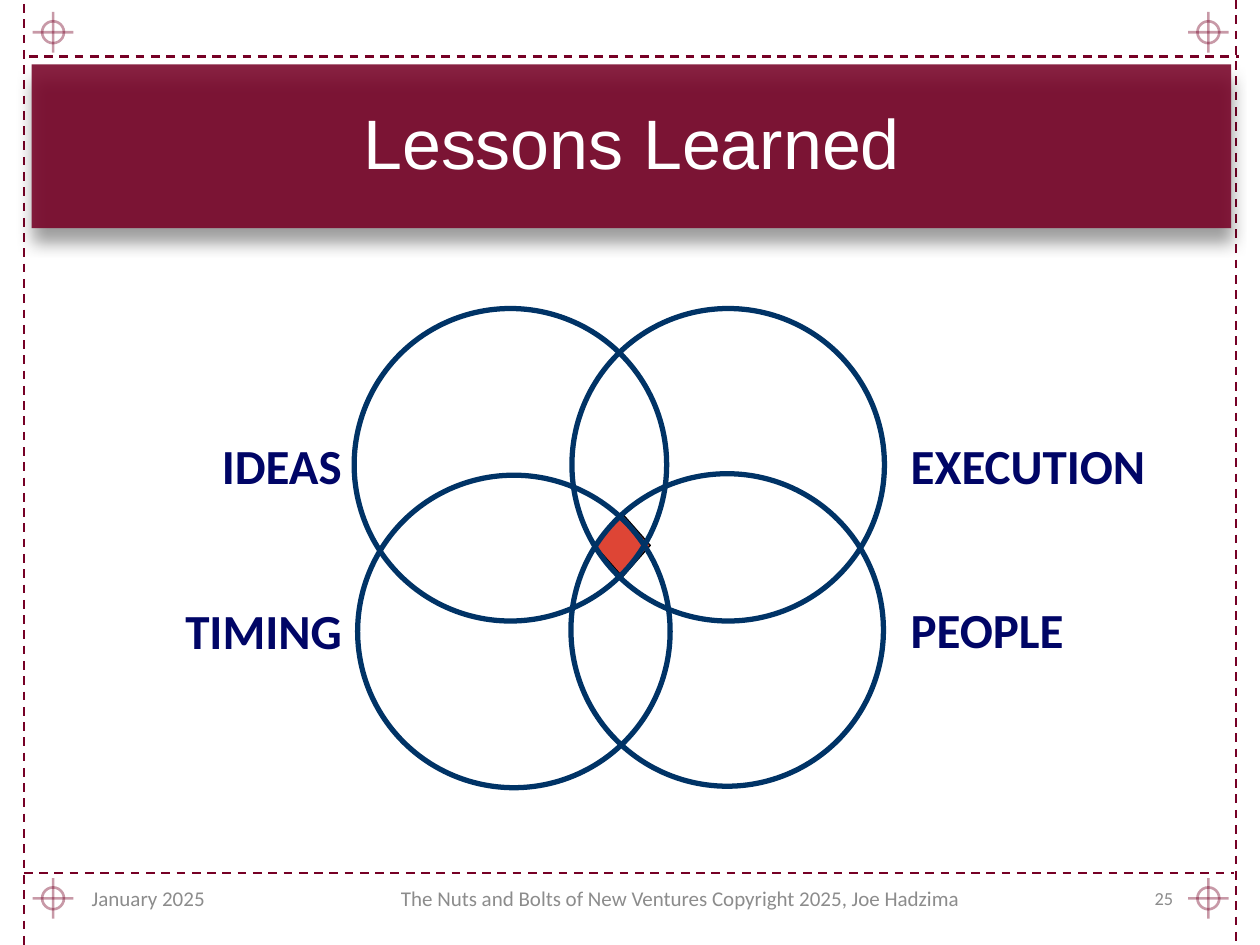
from itertools import product

from lxml import etree
from pptx import Presentation
from pptx.dml.color import RGBColor
from pptx.enum.dml import MSO_LINE
from pptx.enum.shapes import MSO_CONNECTOR, MSO_SHAPE
from pptx.enum.text import MSO_ANCHOR, PP_ALIGN
from pptx.oxml.ns import qn
from pptx.util import Cm, Pt

STRAIGHT = MSO_CONNECTOR.STRAIGHT
RECTANGLE, ELLIPSE, DIAMOND = MSO_SHAPE.RECTANGLE, MSO_SHAPE.OVAL, MSO_SHAPE.DIAMOND
DASH = MSO_LINE.DASH
LEFT, CENTER, RIGHT = PP_ALIGN.LEFT, PP_ALIGN.CENTER, PP_ALIGN.RIGHT
TOP, MIDDLE = MSO_ANCHOR.TOP, MSO_ANCHOR.MIDDLE

COLORS = {
    "maroon": "760025",
    "white": "FFFFFF",
    "gray": "8C8C8C",
    "circle": "003366",
    "label": "000566",
    "overlap": "DE4535",
    "black": "000000",
}


def color(name):
    return RGBColor.from_string(COLORS[name])


def set_opacity(parent, percent):
    """Make the solid colour inside parent partly transparent."""
    rgb = next(parent.iter(qn("a:srgbClr")))
    etree.SubElement(rgb, qn("a:alpha"), val=str(percent * 1000))


class SlideBuilder:
    """Holds the style and the slide; all positions are in centimetres."""

    body_font = "Calibri"

    def __init__(self, slide):
        self.slide = slide

    def style_line(self, line, name, width, opacity=None):
        line.color.rgb = color(name)
        line.width = Pt(width)
        if opacity:
            set_opacity(line._get_or_add_ln(), opacity)

    def line(self, start, end, width, dash=None, opacity=None, shapes=None):
        shapes = shapes or self.slide.shapes
        connector = shapes.add_connector(STRAIGHT, *map(Cm, start + end))
        self.style_line(connector.line, "maroon", width, opacity)
        if dash:
            connector.line.dash_style = dash
        etree.SubElement(connector._element.spPr, qn("a:effectLst"))

    def shape(self, kind, box, fill=None, outline=None, width=1, opacity=None, shapes=None):
        shapes = shapes or self.slide.shapes
        shape = shapes.add_shape(kind, *map(Cm, box))
        shape.shadow.inherit = False
        if fill:
            shape.fill.solid()
            shape.fill.fore_color.rgb = color(fill)
        else:
            shape.fill.background()
        if outline:
            self.style_line(shape.line, outline, width, opacity)
        else:
            shape.line.fill.background()
        return shape

    def text(self, box, text, size, name, align=LEFT, anchor=MIDDLE, bold=False, font=None):
        frame = self.slide.shapes.add_textbox(*map(Cm, box)).text_frame
        frame.word_wrap = True
        frame.vertical_anchor = anchor
        paragraph = frame.paragraphs[0]
        paragraph.text = text
        paragraph.alignment = align
        paragraph.font.name = font or self.body_font
        paragraph.font.size = Pt(size)
        paragraph.font.bold = bold
        paragraph.font.color.rgb = color(name)

    def crop_mark(self, x, y):
        """A small ring with a cross through it, centred on x, y."""
        shapes = self.slide.shapes.add_group_shape().shapes
        style = {"width": 1.5, "opacity": 40, "shapes": shapes}
        radius, arm = 0.22, 0.41
        ring = (x - radius, y - radius, 2 * radius, 2 * radius)
        self.shape(ELLIPSE, ring, outline="maroon", **style)
        self.line((x, y - arm), (x, y + arm), **style)
        self.line((x + arm, y), (x - arm, y), **style)

    def title_band(self, box):
        """A translucent band with a soft shadow below it."""
        band = self.shape(RECTANGLE, box, fill="maroon")
        properties = band._element.spPr
        set_opacity(properties, 87)
        shadow = etree.SubElement(
            properties.find(qn("a:effectLst")), qn("a:outerShdw"),
            blurRad=str(Pt(9)), dist=str(Pt(8)), dir="5400000", rotWithShape="0")
        etree.SubElement(shadow, qn("a:srgbClr"), val=COLORS["black"])
        set_opacity(shadow, 43)

    def circle(self, left, top, label, label_box, align):
        diameter = 6.3
        self.shape(ELLIPSE, (left, top, diameter, diameter), outline="circle", width=3)
        self.text(label_box, label, 28, "label", align, TOP, bold=True)


def main():
    presentation = Presentation()
    presentation.slide_width, presentation.slide_height = Cm(25.4), Cm(19.05)
    builder = SlideBuilder(presentation.slides.add_slide(presentation.slide_layouts[6]))

    guides = [
        ((0.48, 0.08), (0.48, 19.05)),
        ((0.58, 1.14), (24.97, 1.14)),
        ((24.92, 0), (24.92, 19.05)),
        ((0.48, 17.6), (24.87, 17.6)),
    ]
    for start, end in guides:
        builder.line(start, end, 1.25, DASH)
    for y, x in product((0.65, 18.11), (1.07, 24.36)):
        builder.crop_mark(x, y)

    builder.title_band((0.64, 1.3, 24.18, 3.3))
    builder.text((0.64, 1.27, 24.18, 3.18), "Lessons Learned", 40, "white", CENTER, font="Arial")

    builder.shape(DIAMOND, (11.99, 10.36, 1.12, 1.27), "overlap", "black", 0.75)
    circles = [
        (11.53, 6.22, "EXECUTION", (18.11, 8.66, 6.99, 1.45), LEFT),
        (7.14, 6.22, "IDEAS", (3.23, 8.66, 3.91, 1.45), RIGHT),
        (7.21, 9.58, "TIMING", (0.84, 11.99, 6.3, 1.45), RIGHT),
        (11.51, 9.55, "PEOPLE", (18.11, 11.96, 6.3, 1.45), LEFT),
    ]
    for circle in circles:
        builder.circle(*circle)

    footers = [
        (1.6, 5.92, "January 2025", 12, LEFT),
        (5.08, 17.27, "The Nuts and Bolts of New Ventures Copyright 2025, Joe Hadzima", 12, CENTER),
        (22.86, 1.04, "25", 10.5, RIGHT),
    ]
    for left, width, text, size, align in footers:
        builder.text((left, 17.6, width, 1.02), text, size, "gray", align)

    presentation.save("out.pptx")


if __name__ == "__main__":
    main()
